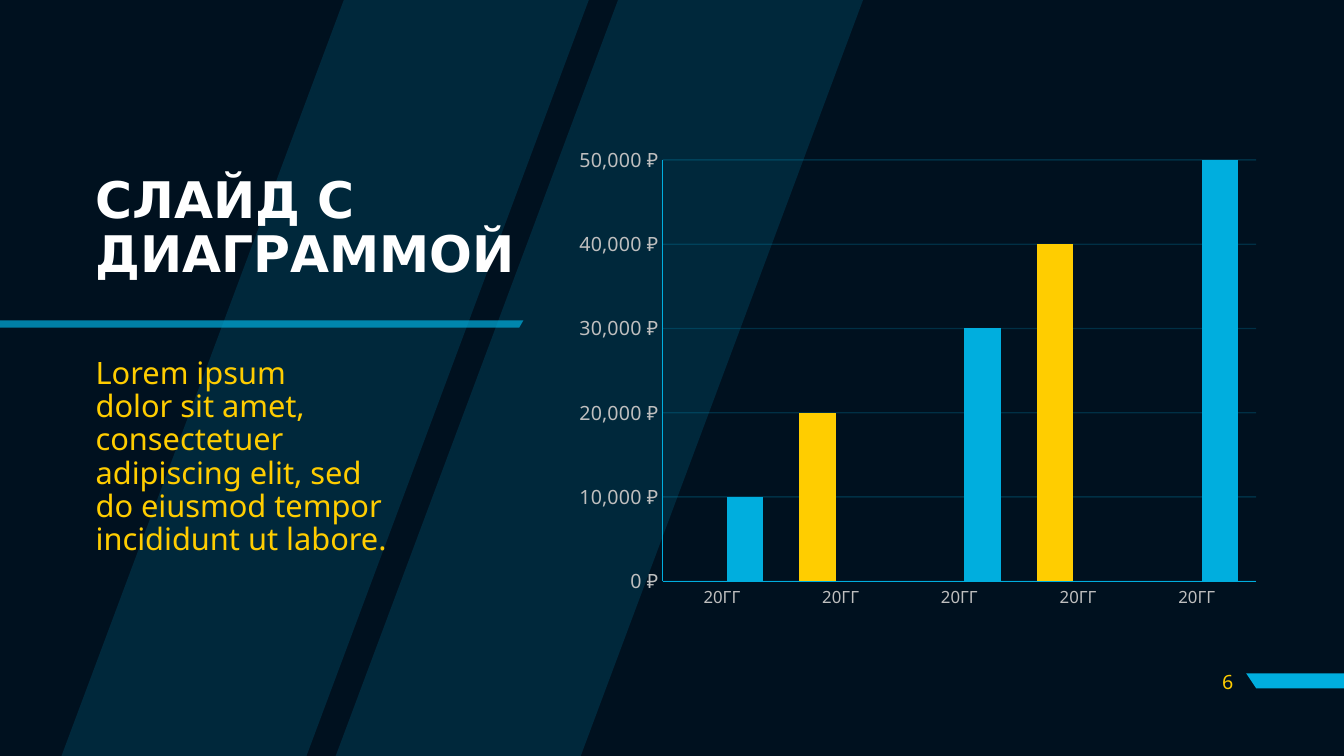
from copy import deepcopy
from dataclasses import dataclass

from lxml import etree
from pptx import Presentation
from pptx.chart.data import CategoryChartData
from pptx.dml.color import RGBColor
from pptx.enum.chart import XL_CHART_TYPE, XL_TICK_MARK
from pptx.enum.text import MSO_ANCHOR, PP_ALIGN
from pptx.oxml import parse_xml
from pptx.oxml.ns import nsdecls, qn
from pptx.util import Pt

EMU_PER_PX = 9144
COLUMNS = XL_CHART_TYPE.COLUMN_CLUSTERED
NO_TICK = XL_TICK_MARK.NONE
TOP, MIDDLE = MSO_ANCHOR.TOP, MSO_ANCHOR.MIDDLE
LEFT, RIGHT = PP_ALIGN.LEFT, PP_ALIGN.RIGHT


@dataclass(frozen=True)
class Theme:
    background: str = "00111F"
    accent: str = "00AEDE"
    highlight: str = "FFCD00"
    heading: str = "FFFFFF"
    axis_text: str = "BFBFBF"
    heading_font: str = "DejaVu Sans"
    body_font: str = "Noto Sans"
    heading_size: int = 36
    body_size: int = 22
    label_size: int = 14
    category_size: int = 12


def px(length):
    return round(length * EMU_PER_PX)


def set_fill(fill, color, opacity=100):
    """Make the fill solid, with opacity in percent."""
    fill.solid()
    fill.fore_color.rgb = RGBColor.from_string(color)
    if opacity < 100:
        for element in fill._xPr.iter(qn("a:srgbClr")):
            alpha = etree.SubElement(element, qn("a:alpha"))
            alpha.set("val", str(opacity * 1000))


def set_font(font, name, size, color, bold=False):
    font.name = name
    font.size = Pt(size)
    font.bold = bold
    font.color.rgb = RGBColor.from_string(color)


def move_last_series_to_hidden_axes(chart):
    """Plot the last series on a hidden secondary pair of axes."""
    area = chart._chartSpace.find(f".//{qn('c:plotArea')}")
    primary = area.find(qn("c:barChart"))
    secondary = deepcopy(primary)
    primary.remove(primary.findall(qn("c:ser"))[-1])
    for series in secondary.findall(qn("c:ser"))[:-1]:
        secondary.remove(series)
    primary.addnext(secondary)

    axes = [area.find(qn("c:catAx")), area.find(qn("c:valAx"))]
    hidden_axes = [deepcopy(axis) for axis in axes]
    hidden_ids = {axis.find(qn("c:axId")).get("val"): str(number)
                  for number, axis in enumerate(axes, 1001)}
    for element in (secondary, *hidden_axes):
        for tag in ("c:axId", "c:crossAx"):
            for reference in element.findall(qn(tag)):
                reference.set("val", hidden_ids[reference.get("val")])
    for axis in hidden_axes:
        axis.find(qn("c:delete")).set("val", "1")
        for grid in axis.findall(qn("c:majorGridlines")):
            axis.remove(grid)
    value_axis = hidden_axes[1]
    value_axis.find(qn("c:axPos")).set("val", "r")
    value_axis.find(qn("c:crosses")).set("val", "max")
    axes[1].addnext(hidden_axes[0])
    hidden_axes[0].addnext(value_axis)


class SlideBuilder:
    def __init__(self, presentation, theme):
        self.theme = theme
        self.slide = presentation.slides.add_slide(presentation.slide_layouts[6])
        set_fill(self.slide.background.fill, theme.background)

    def polygons(self, outlines, opacity=100):
        """Draw closed outlines as one accent-coloured shape."""
        builder = None
        for start, *points in outlines:
            if builder is None:
                builder = self.slide.shapes.build_freeform(*start, scale=EMU_PER_PX)
            else:
                builder.move_to(*start)
            builder.add_line_segments(points, close=True)
        shape = builder.convert_to_shape()
        shape.shadow.inherit = False
        set_fill(shape.fill, self.theme.accent, opacity)
        shape.line.fill.background()

    def text(self, box, lines, font, size, color, bold=False, anchor=TOP,
             align=LEFT, line_spacing=1.0, space_before=0):
        shape = self.slide.shapes.add_textbox(*map(px, box))
        frame = shape.text_frame
        frame.word_wrap = True
        frame.vertical_anchor = anchor
        paragraph = frame.paragraphs[0]
        paragraph.alignment = align
        paragraph.line_spacing = line_spacing
        paragraph.space_before = Pt(space_before)
        for index, line in enumerate(lines):
            if index:
                paragraph.add_line_break()
            run = paragraph.add_run()
            run.text = line
            set_font(run.font, font, size, color, bold)

    def style_axis(self, axis, size):
        theme = self.theme
        axis.major_tick_mark = axis.minor_tick_mark = NO_TICK
        set_font(axis.tick_labels.font, theme.body_font, size, theme.axis_text)
        set_fill(axis.format.line.fill, theme.accent)
        axis.format.line.width = Pt(1)

    def column_chart(self, box, plot, categories, series):
        """Add a chart; plot is the inner plot area as fractions of the box."""
        theme = self.theme
        data = CategoryChartData()
        data.categories = categories
        for name, values, _ in series:
            data.add_series(name, values)
        chart = self.slide.shapes.add_chart(COLUMNS, *map(px, box), data).chart
        chart.has_title = False
        chart.has_legend = False
        set_font(chart.font, theme.body_font, theme.category_size, theme.axis_text)

        columns = chart.plots[0]
        columns.gap_width = 100
        columns.overlap = -27
        columns.vary_by_categories = False
        for column_series, (_, _, color) in zip(columns.series, series):
            set_fill(column_series.format.fill, color)
            column_series.invert_if_negative = False

        self.style_axis(chart.category_axis, theme.category_size)
        axis = chart.value_axis
        self.style_axis(axis, theme.label_size)
        axis.minimum_scale, axis.maximum_scale, axis.major_unit = 0, 50000, 10000
        axis.tick_labels.number_format = '#,##0\\ "₽"'
        axis.tick_labels.number_format_is_linked = False
        grid_line = axis.major_gridlines.format.line
        set_fill(grid_line.fill, theme.accent, 20)
        grid_line.width = Pt(1)
        self.place_plot(chart, plot)
        move_last_series_to_hidden_axes(chart)

    def place_plot(self, chart, plot):
        settings = [("layoutTarget", "inner"), ("xMode", "edge"), ("yMode", "edge"),
                    *zip("xywh", plot)]
        items = "".join(f'<c:{tag} val="{value}"/>' for tag, value in settings)
        layout = parse_xml(f"<c:layout {nsdecls('c')}><c:manualLayout>{items}"
                           "</c:manualLayout></c:layout>")
        area = chart._chartSpace.find(f".//{qn('c:plotArea')}")
        for old_layout in area.findall(qn("c:layout")):
            area.remove(old_layout)
        area.insert(0, layout)


def slanted_band(left):
    """Full-height band whose lower left corner is at left."""
    width, slant, height = 243, 280, 750
    return [(left, height), (left + width, height),
            (left + width + slant, 0), (left + slant, 0)]


def main():
    presentation = Presentation()
    presentation.slide_width, presentation.slide_height = px(1333), px(750)
    theme = Theme()
    builder = SlideBuilder(presentation, theme)
    builder.polygons([slanted_band(61), slanted_band(333)], opacity=15)
    builder.polygons([[(1236, 668), (1333, 668), (1333, 683), (1246, 683)]])
    builder.polygons([[(0, 318), (519, 318), (515, 325), (0, 325)]], opacity=70)
    builder.text((85, 144, 443, 167), ["СЛАЙД С ДИАГРАММОЙ"], theme.heading_font,
                 theme.heading_size, theme.heading, bold=True, anchor=MIDDLE,
                 line_spacing=0.9)
    builder.text((85, 350, 309, 236),
                 ["Lorem ipsum", "dolor sit amet, consectetuer adipiscing elit, sed",
                  "do eiusmod tempor incididunt ut labore."],
                 theme.body_font, theme.body_size, theme.highlight,
                 line_spacing=0.9, space_before=10)
    builder.column_chart(
        (559, 135, 701, 475), (0.14, 0.05, 0.84, 0.88), ["20ГГ"] * 5,
        [("Series 1", [None, 20000, None, 40000, None], theme.highlight),
         ("Series 2", [10000, None, 30000, None, 50000], theme.accent)])
    builder.text((1173, 656, 60, 40), ["6"], theme.body_font, theme.label_size,
                 theme.highlight, anchor=MIDDLE, align=RIGHT)
    presentation.save("out.pptx")


if __name__ == "__main__":
    main()
